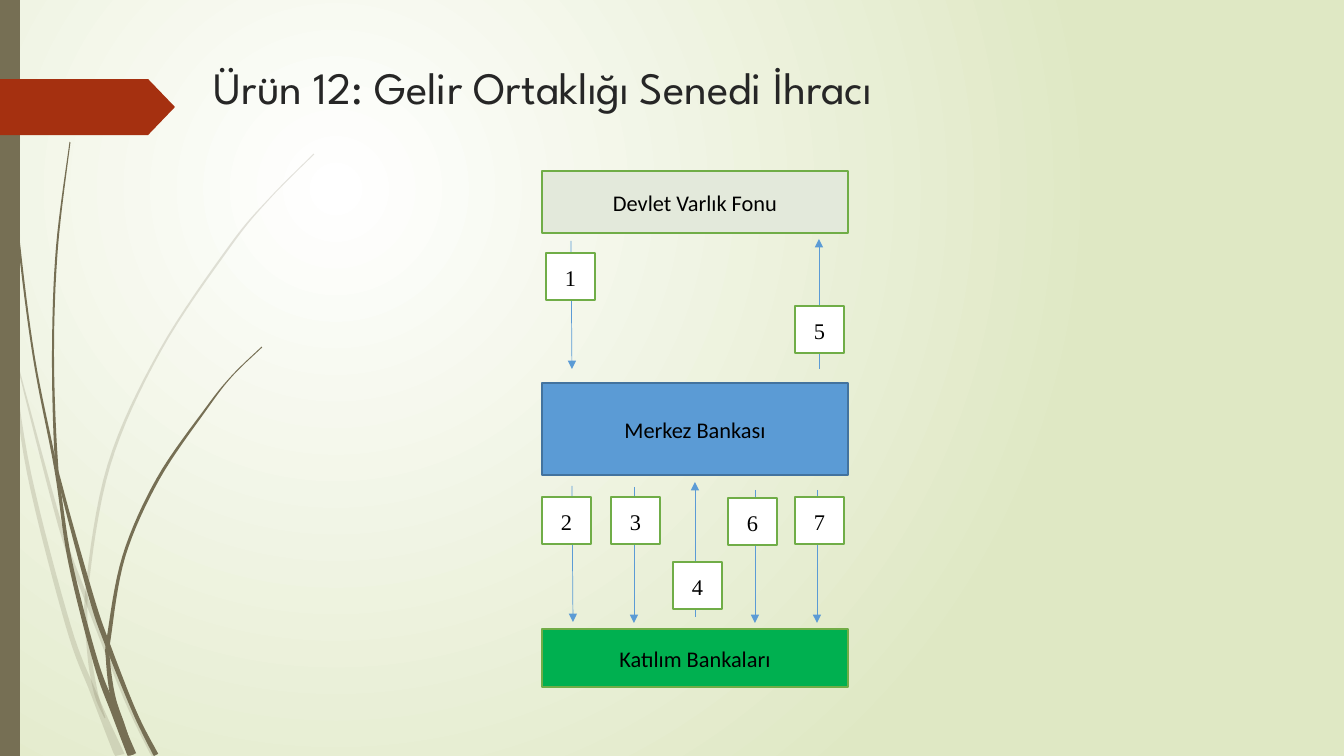
from math import hypot

from lxml.etree import SubElement
from pptx import Presentation
from pptx.dml.color import RGBColor
from pptx.enum.shapes import MSO_CONNECTOR as Connector, MSO_SHAPE as Shape
from pptx.enum.text import MSO_ANCHOR as Anchor, PP_ALIGN as Align
from pptx.oxml.ns import qn
from pptx.util import Pt

PX = 914400 / 100.8
WIDTH, HEIGHT = 1344, 756

WHITE = RGBColor(0xFF, 0xFF, 0xFF)
BLACK = RGBColor(0, 0, 0)
CREAM = RGBColor(0xDF, 0xE8, 0xC4)
OLIVE = RGBColor(0x76, 0x6F, 0x54)
RUST = RGBColor(0xA5, 0x30, 0x10)
CHARCOAL = RGBColor(0x26, 0x26, 0x26)
BLUE = RGBColor(0x5B, 0x9B, 0xD5)
NAVY = RGBColor(0x43, 0x73, 0x9E)
SAGE = RGBColor(0xE3, 0xE9, 0xDB)
GREEN = RGBColor(0, 0xB0, 0x50)
LEAF = RGBColor(0x70, 0xAD, 0x47)

TITLE = "Ürün 12: Gelir Ortaklığı Senedi İhracı"

# Name, top, height, fill, outline
INSTITUTION_LEFT, INSTITUTION_WIDTH = 542, 306
INSTITUTIONS = [
    ("Merkez Bankası", 383, 92, BLUE, NAVY),
    ("Devlet Varlık Fonu", 171, 62, SAGE, LEAF),
    ("Katılım Bankaları", 629, 58, GREEN, LEAF),
]

# Start x, start y, end x, end y
ARROWS = [
    (571, 241, 572, 369),
    (572, 486, 573, 622),
    (695, 617, 695, 482),
    (634, 487, 634, 623),
    (755, 490, 755, 623),
    (819, 369, 819, 239),
    (817, 490, 817, 623),
]

# Step number, left, top
STEP_WIDTH, STEP_HEIGHT = 49, 47
STEPS = [
    ("1", 546, 253), ("2", 542, 497), ("3", 611, 497), ("4", 673, 562),
    ("6", 728, 498), ("7", 795, 497), ("5", 795, 306),
]

# Grass blades: centre x, centre y, thickness
PALE_BLADES = [
    [(2, 292, 2), (11, 350, 2), (29, 473, 4), (68, 625, 5), (94, 694, 6),
     (120, 756, 10)],
    [(15, 355, 1), (60, 525, 4), (86, 598, 4), (126, 699, 4), (154, 756, 5)],
    [(314, 154, 1), (270, 198, 1), (230, 246, 2), (160, 351, 2),
     (109, 465, 3), (87, 589, 3), (89, 650, 4), (96, 693, 4), (105, 718, 1)],
]
DARK_BLADES = [
    [(4, 0, 1), (7, 110, 1), (18, 234, 2), (34, 358, 2), (56, 470, 3),
     (70, 561, 4), (96, 663, 5), (115, 713, 7), (132, 755, 9)],
    [(70, 142, 1), (57, 247, 2), (53, 352, 2), (56, 455, 3), (62, 490, 3),
     (91, 596, 5), (107, 643, 5), (135, 713, 4), (156, 755, 5)],
    [(262, 347, 1), (232, 376, 1), (206, 409, 2), (158, 479, 3),
     (124, 556, 3), (109, 637, 4), (108, 660, 4), (113, 697, 5),
     (123, 727, 5), (132, 755, 5)],
]


def emu(*lengths):
    return [round(length * PX) for length in lengths]


def smooth(points, steps=8):
    """Sample a Catmull-Rom curve through the points, thickness included."""
    padded = [points[0], *points, points[-1]]
    curve = []
    for before, start, end, after in zip(padded, padded[1:], padded[2:], padded[3:]):
        for step in range(steps):
            t = step / steps
            curve.append(tuple(
                b + 0.5 * t * (c - a + t * (2 * a - 5 * b + 4 * c - d
                               + t * (3 * (b - c) + d - a)))
                for a, b, c, d in zip(before, start, end, after)))
    return curve + [points[-1]]


def add_blade(slide, points, opacity):
    curve = smooth(points)
    left_edge, right_edge = [], []
    neighbours = zip([curve[0]] + curve[:-1], curve, curve[1:] + [curve[-1]])
    for before, (x, y, thickness), after in neighbours:
        dx, dy = after[0] - before[0], after[1] - before[1]
        half = thickness / 2 / hypot(dx, dy)
        left_edge.append((x - dy * half, min(y + dx * half, HEIGHT)))
        right_edge.append((x + dy * half, min(y - dx * half, HEIGHT)))
    outline = [emu(*point) for point in left_edge + right_edge[::-1]]
    builder = slide.shapes.build_freeform(*outline[0])
    builder.add_line_segments(outline[1:], close=True)
    blade = builder.convert_to_shape()
    paint(blade, OLIVE)
    if opacity < 100:
        color = blade.element.spPr.find(qn("a:solidFill")).find(qn("a:srgbClr"))
        SubElement(color, qn("a:alpha"), val=str(opacity * 1000))


def paint(shape, fill, outline=None):
    shape.shadow.inherit = False
    shape.fill.solid()
    shape.fill.fore_color.rgb = fill
    if outline is None:
        shape.line.fill.background()
    else:
        shape.line.color.rgb = outline
        shape.line.width = Pt(1)


def style_run(paragraph, font_name, size, color):
    font = paragraph.runs[0].font
    font.name, font.size = font_name, Pt(size)
    font.color.rgb = color


def add_box(slide, text, bounds, fill, outline, font_name, line_spacing):
    box = slide.shapes.add_shape(Shape.RECTANGLE, *emu(*bounds))
    paint(box, fill, outline)
    box.text_frame.text = text
    box.text_frame.vertical_anchor = Anchor.MIDDLE
    paragraph = box.text_frame.paragraphs[0]
    paragraph.alignment = Align.CENTER
    paragraph.line_spacing = line_spacing
    paragraph.space_after = Pt(8)
    style_run(paragraph, font_name, 16, BLACK)


def add_arrow(slide, ends):
    arrow = slide.shapes.add_connector(Connector.STRAIGHT, *emu(*ends))
    arrow.line.color.rgb = BLUE
    arrow.line.width = Pt(0.5)
    properties = arrow.element.spPr
    SubElement(properties.find(qn("a:ln")), qn("a:tailEnd"), type="triangle")
    SubElement(properties, qn("a:effectLst"))


def set_background(slide):
    fill = slide.background.fill
    fill.gradient()
    for stop, color, position in zip(fill.gradient_stops, (WHITE, CREAM), (0, 1)):
        stop.color.rgb = color
        stop.position = position
    gradient = slide.element.find(".//" + qn("a:gradFill"))
    gradient.remove(gradient.find(qn("a:lin")))
    circle = SubElement(gradient, qn("a:path"))
    circle.set("path", "circle")
    SubElement(circle, qn("a:fillToRect"), l="50000", t="50000", r="100000", b="100000")


def set_title(slide):
    title = slide.shapes.title
    title.left, title.top, title.width, title.height = emu(214, 57, 920, 60)
    frame = title.text_frame
    frame.margin_left = frame.margin_right = 0
    frame.margin_top = frame.margin_bottom = 0
    frame.vertical_anchor = Anchor.MIDDLE
    frame.text = TITLE
    frame.paragraphs[0].alignment = Align.LEFT
    style_run(frame.paragraphs[0], "League Spartan", 32, CHARCOAL)


def main():
    presentation = Presentation()
    presentation.slide_width, presentation.slide_height = emu(WIDTH, HEIGHT)
    slide = presentation.slides.add_slide(presentation.slide_layouts[5])
    set_background(slide)
    set_title(slide)

    for blades, opacity in ((PALE_BLADES, 20), (DARK_BLADES, 100)):
        for points in blades:
            add_blade(slide, points, opacity)
    side_bar = slide.shapes.add_shape(Shape.RECTANGLE, *emu(0, 0, 20, HEIGHT))
    paint(side_bar, OLIVE)
    ribbon = slide.shapes.add_shape(Shape.PENTAGON, *emu(0, 79, 175, 56))
    ribbon.adjustments[0] = 0.48
    paint(ribbon, RUST)

    for name, top, height, fill, outline in INSTITUTIONS:
        bounds = (INSTITUTION_LEFT, top, INSTITUTION_WIDTH, height)
        add_box(slide, name, bounds, fill, outline, "Calibri", 1.07)
    for ends in ARROWS:
        add_arrow(slide, ends)
    for number, left, top in STEPS:
        bounds = (left, top, STEP_WIDTH, STEP_HEIGHT)
        add_box(slide, number, bounds, WHITE, LEAF, "Times New Roman", 1.05)

    presentation.save("out.pptx")


if __name__ == "__main__":
    main()
